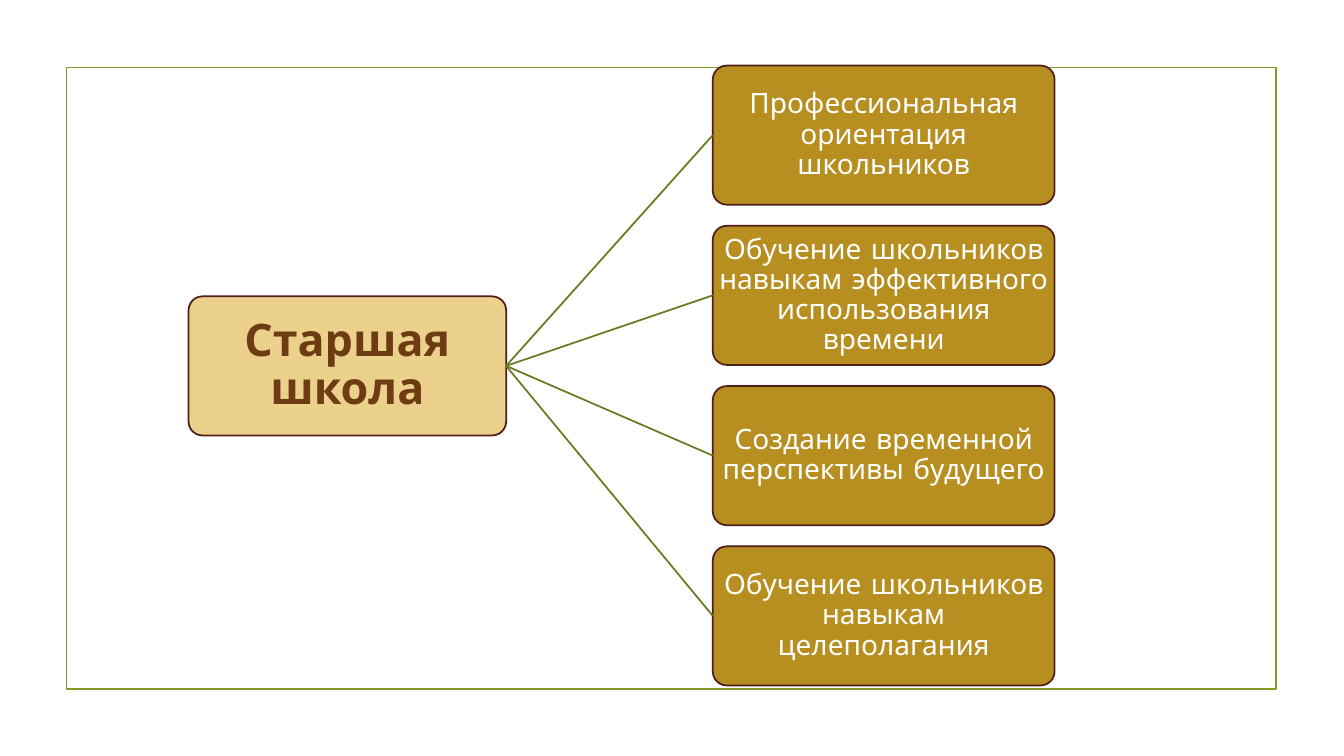
from pptx import Presentation
from pptx import util as u
from pptx.dml import color
from pptx.enum import shapes, text
from pptx.oxml import ns
from lxml import etree

DIRECTIONS = [
    "Профессиональная ориентация школьников",
    "Обучение школьников навыкам эффективного использования времени",
    "Создание временной перспективы будущего",
    "Обучение школьников навыкам целеполагания",
]
FRAME, BORDER, LINK = "83992A", "511E19", "697B22"
STAGE_FILL, STAGE_TEXT = "EBD18C", "6D3C13"
DIRECTION_FILL, DIRECTION_TEXT = "B78E20", "FFFFFF"
LEFT_SITE, RIGHT_SITE = 1, 3
CARD_HEIGHT, ROW_STEP = 18.4, 21.2


def rgb(hex_code):
    return color.RGBColor.from_string(hex_code)


class Diagram:
    """Draws on one slide; lengths are percent of its width and height."""

    font = "Comic Neue"
    stroke = u.Pt(1.25)

    def __init__(self, deck):
        self.column = deck.slide_width / 100
        self.row = deck.slide_height / 100
        self.slide = deck.slides.add_slide(deck.slide_layouts[6])

    def outline(self, item, hex_code):
        item.line.color.rgb = rgb(hex_code)
        item.line.width = self.stroke

    def panel(self, preset, left, top, width, height, border):
        panel = self.slide.shapes.add_shape(
            preset, round(left * self.column), round(top * self.row),
            round(width * self.column), round(height * self.row))
        panel.shadow.inherit = False
        panel.fill.background()
        self.outline(panel, border)
        return panel

    def card(self, words, left, top, width, fill, ink, size, inset, bold=False):
        card = self.panel(shapes.MSO_SHAPE.ROUNDED_RECTANGLE,
                          left, top, width, CARD_HEIGHT, BORDER)
        card.adjustments[0] = 0.1
        card.fill.solid()
        card.fill.fore_color.rgb = rgb(fill)
        frame = card.text_frame
        frame.word_wrap = True
        frame.vertical_anchor = text.MSO_ANCHOR.MIDDLE
        frame.margin_left = frame.margin_right = u.Inches(inset)
        frame.margin_top = frame.margin_bottom = u.Inches(inset)
        paragraph = frame.paragraphs[0]
        paragraph.alignment = text.PP_ALIGN.CENTER
        paragraph.line_spacing = 0.9
        run = paragraph.add_run()
        run.text = words
        run.font.name = self.font
        run.font.size = u.Pt(size)
        run.font.bold = bold
        run.font.color.rgb = rgb(ink)
        return card

    def link(self, source, target):
        """Joins the right side of source to the left side of target."""
        link = self.slide.shapes.add_connector(
            shapes.MSO_CONNECTOR.STRAIGHT, 0, 0, 0, 0)
        link.begin_connect(source, RIGHT_SITE)
        link.end_connect(target, LEFT_SITE)
        self.outline(link, LINK)
        etree.SubElement(link._element.spPr, ns.qn("a:effectLst"))


def main():
    deck = Presentation()
    deck.slide_width, deck.slide_height = u.Inches(13.33), u.Inches(7.5)
    diagram = Diagram(deck)
    diagram.panel(shapes.MSO_SHAPE.RECTANGLE, 4.95, 8.93, 90, 82.27, FRAME)
    stage = diagram.card("Старшая школа", 14.03, 39.2, 23.63,
                         STAGE_FILL, STAGE_TEXT, 32, 0.02, bold=True)
    for index, words in enumerate(DIRECTIONS):
        direction = diagram.card(words, 53.04, 8.67 + index * ROW_STEP, 25.43,
                                 DIRECTION_FILL, DIRECTION_TEXT, 20, 0.01)
        diagram.link(stage, direction)
    deck.save("out.pptx")


if __name__ == "__main__":
    main()
